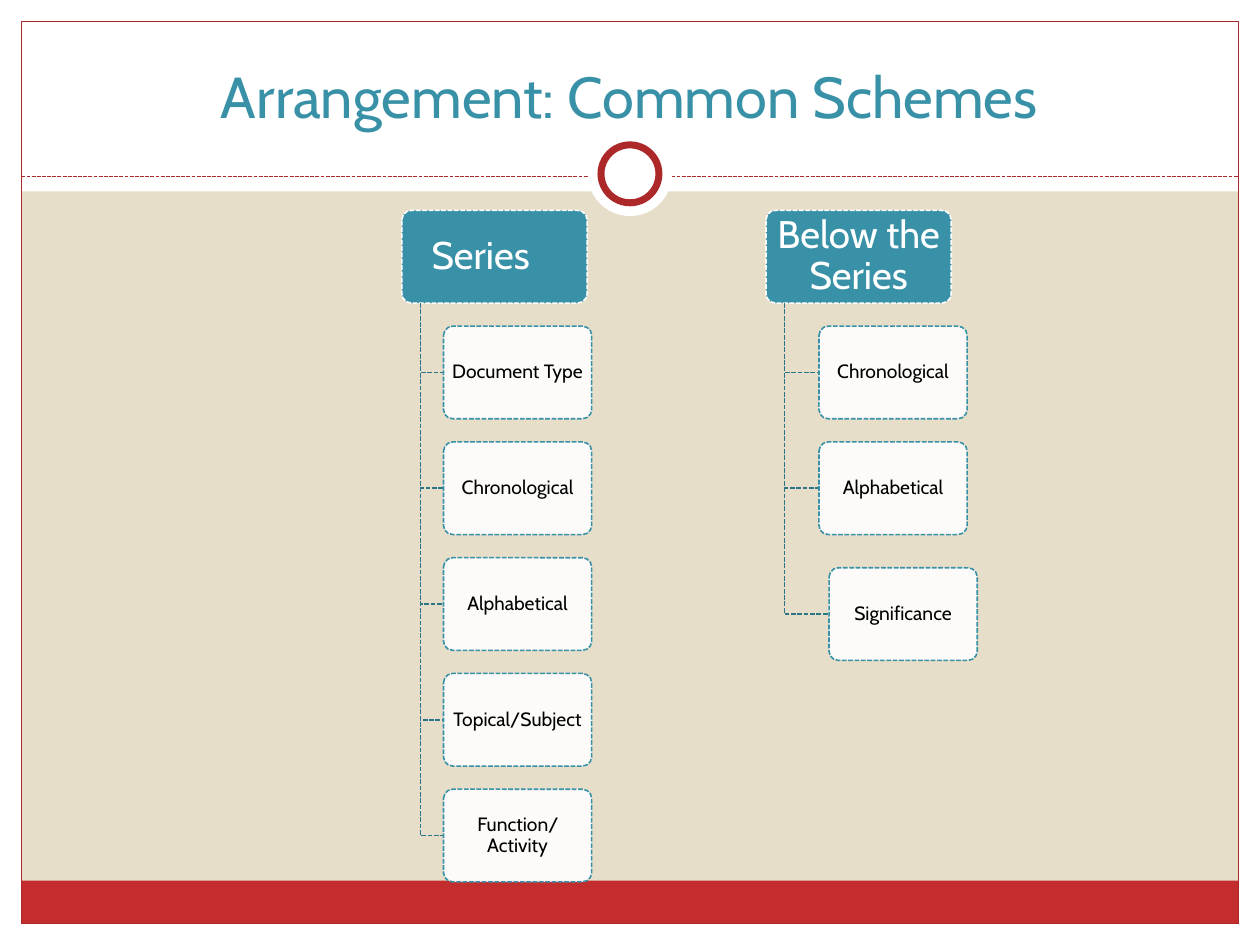
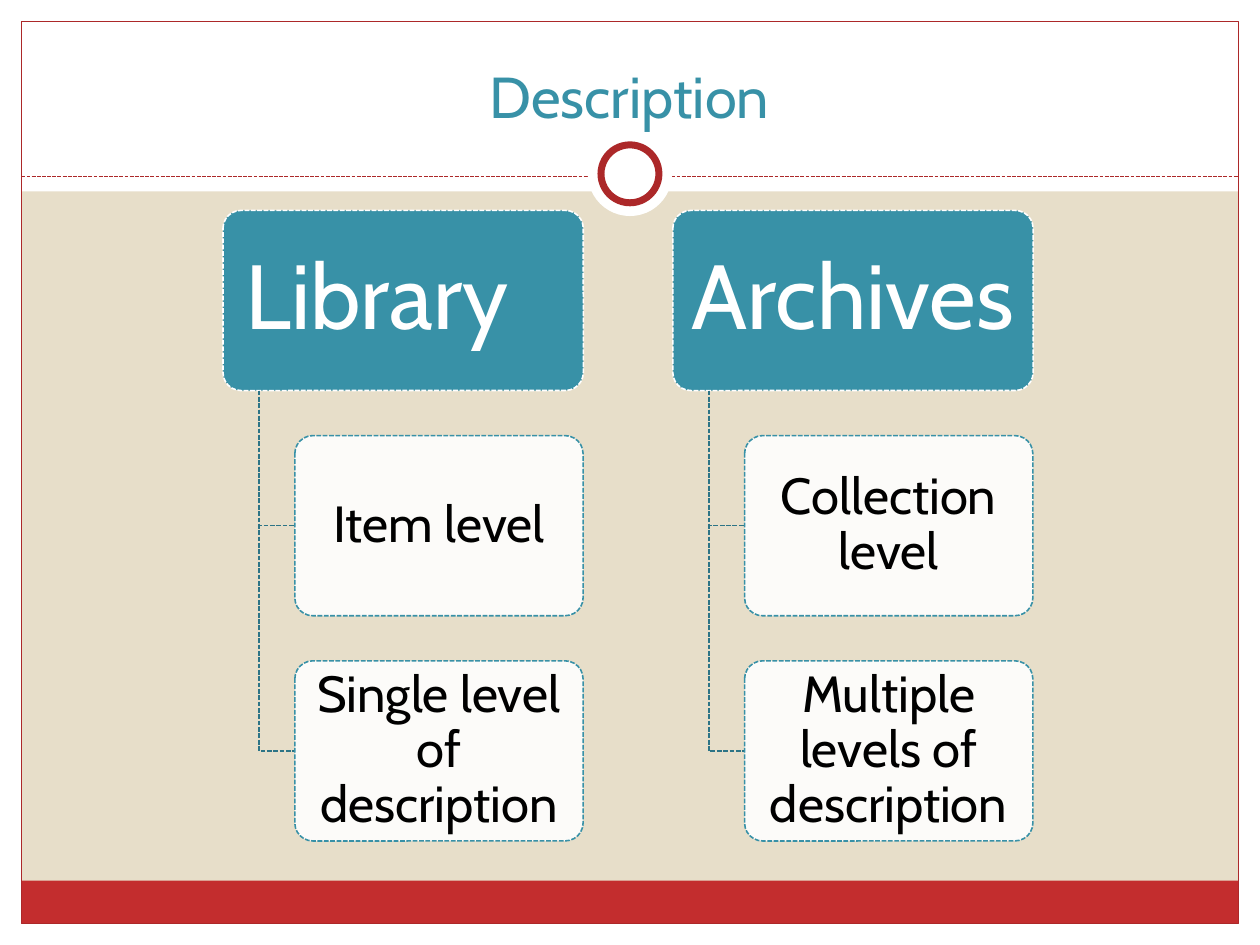
import pptx
import pptx.dml.color
import pptx.enum.dml
import pptx.enum.shapes
import pptx.enum.text
import pptx.oxml.ns
import pptx.util
from lxml import etree

INK = {
    "sand": "E7DEC9", "white": "FFFFFF", "black": "000000", "teal": "3891A7",
    "deep": "2D7486", "red": "C32D2E", "rust": "AC2829",
}
FONT = "Cabin"
COLS, ROWS = 100, 75  # the slide's grid, in square cells
CELL = pptx.util.Inches(0.1)
TOP = 16.7            # row where the trees start
KIND = pptx.enum.shapes.MSO_SHAPE
ALIGN = pptx.enum.text.PP_ALIGN
ANCHOR = pptx.enum.text.MSO_ANCHOR


def grid(*cells):
    return [round(n * CELL) for n in cells]


def tint(name):
    return pptx.dml.color.RGBColor.from_string(INK[name])


def stroke(item, ink, width, dash=False):
    item.line.color.rgb = tint(ink)
    item.line.width = pptx.util.Pt(width)
    if dash:
        item.line.dash_style = pptx.enum.dml.MSO_LINE.SQUARE_DOT


def shape(slide, kind, area, fill=None, line=None, width=0.75, dash=False):
    item = slide.shapes.add_shape(kind, *grid(*area))
    item.shadow.inherit = False
    if fill:
        item.fill.solid()
        item.fill.fore_color.rgb = tint(fill)
    else:
        item.fill.background()
    if line:
        stroke(item, line, width, dash)
    else:
        item.line.fill.background()
    return item


def write(item, text, size, ink, anchor):
    frame = item.text_frame
    frame.word_wrap = True
    frame.vertical_anchor = anchor
    para = frame.paragraphs[0]
    para.text = text
    para.alignment = ALIGN.CENTER
    para.font.name = FONT
    para.font.size = pptx.util.Pt(size)
    para.font.color.rgb = tint(ink)
    return frame


def fade(item, share):
    """Set the opacity of a solid fill, in percent."""
    color = item.fill._xPr.find(".//" + pptx.oxml.ns.qn("a:srgbClr"))
    etree.SubElement(color, pptx.oxml.ns.qn("a:alpha"), val=str(share * 1000))


def rule(slide, left, right, row):
    kind = pptx.enum.shapes.MSO_CONNECTOR.STRAIGHT
    line = slide.shapes.add_connector(kind, *grid(left, row, right, row))
    stroke(line, "rust", 0.75, dash=True)
    etree.SubElement(line._element.spPr, pptx.oxml.ns.qn("a:effectLst"))


def base(deck, title):
    """Add a slide with the shared margins, band, frame, ring and title."""
    slide = deck.slides.add_slide(deck.slide_layouts[6])
    slide.background.fill.solid()
    slide.background.fill.fore_color.rgb = tint("sand")
    edge = 1.7
    wide, tall = COLS - 2 * edge, ROWS - 2 * edge
    margins = [
        (0, ROWS - edge, COLS, edge), (0, 0, COLS, 15.2),
        (0, 0, edge, ROWS), (COLS - edge, 0, edge, ROWS),
    ]
    for area in margins:
        shape(slide, KIND.RECTANGLE, area, "white")
    shape(slide, KIND.RECTANGLE, (edge, 69.9, wide, 3.4), "red")
    shape(slide, KIND.RECTANGLE, (edge, edge, wide, tall), line="rust")
    rule(slide, edge, COLS - edge, 14)
    for size, line in ((6.7, None), (4.6, "rust")):
        area = ((COLS - size) / 2, 13.8 - size / 2, size, size)
        shape(slide, KIND.OVAL, area, "white", line, 4)
    box = slide.shapes.add_textbox(*grid(3.3, 2.5, 93.3, 8.3))
    write(box, title, 33, "teal", ANCHOR.BOTTOM)
    return slide


def card(slide, area, text, size, fill, line, ink):
    item = shape(slide, KIND.ROUNDED_RECTANGLE, area, fill, line, 0.9, True)
    item.adjustments[0] = 0.1
    frame = write(item, text, size, ink, ANCHOR.MIDDLE)
    frame.paragraphs[0].line_spacing = 0.9
    frame.margin_left = frame.margin_right = pptx.util.Pt(0.15 * size)
    frame.margin_top = frame.margin_bottom = pptx.util.Pt(0.1 * size)
    return item


def elbow(slide, left, top, right, foot):
    start, *turns = [grid(*dot) for dot in
                     ((left, top), (left, foot), (right, foot))]
    pen = slide.shapes.build_freeform(*start)
    pen.add_line_segments(turns, close=False)
    item = pen.convert_to_shape()
    item.shadow.inherit = False
    item.fill.background()
    stroke(item, "deep", 0.9, dash=True)


def tree(slide, left, wide, head, kids, sizes, inset, nudge=0):
    """Draw a head with kids below it; nudge moves the last kid."""
    tall = wide / 2
    card(slide, (left, TOP, wide, tall), head, sizes[0],
         "teal", "white", "white")
    for row, text in enumerate(kids, 1):
        shift = nudge if row == len(kids) else 0
        x = left + inset + shift
        y = TOP + 1.25 * tall * row + shift
        elbow(slide, left + wide / 10, TOP + tall, x, y + tall / 2)
        kid = card(slide, (x, y, 0.8 * wide, tall), text, sizes[1],
                   "white", "teal", "black")
        fade(kid, 90)


def main():
    deck = pptx.Presentation()
    deck.slide_width, deck.slide_height = grid(COLS, ROWS)

    slide = base(deck, "Arrangement: Common Schemes")
    sizes = 22, 11
    tree(slide, 31.9, 14.7, "Series\t",
         ["Document Type", "Chronological", "Alphabetical",
          "Topical/Subject", "Function/Activity"], sizes, 3.3)
    tree(slide, 60.8, 14.7, "Below the Series",
         ["Chronological", "Alphabetical", "Significance"], sizes, 4.2, 0.8)

    slide = base(deck, "Description")
    sizes = 52, 29
    tree(slide, 17.7, 28.6, "Library\t",
         ["Item level", "Single level of description"], sizes, 5.7)
    tree(slide, 53.4, 28.6, "Archives",
         ["Collection level", "Multiple levels of description"], sizes, 5.7)

    deck.save("out.pptx")


if __name__ == "__main__":
    main()
